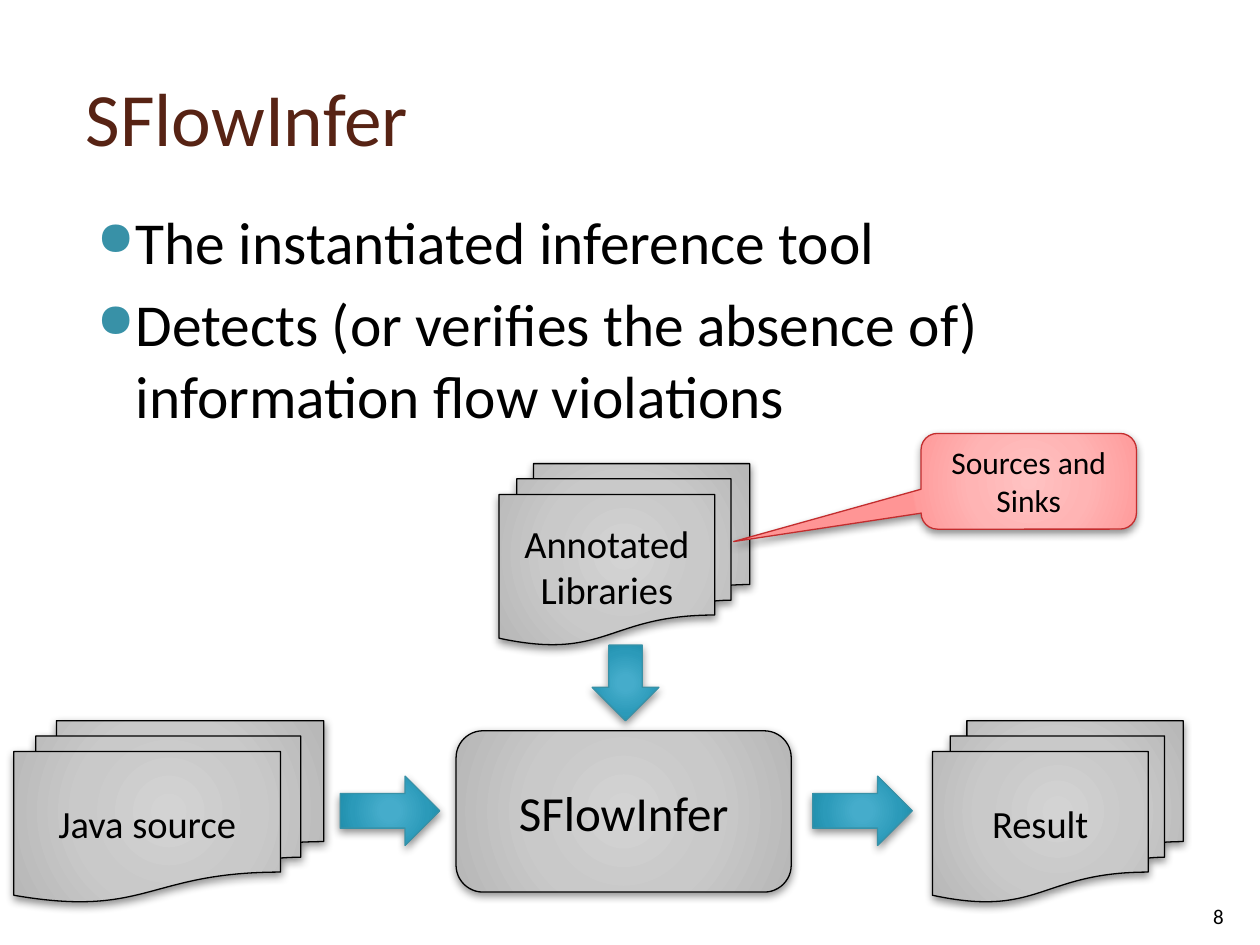
from dataclasses import dataclass

import pptx
import pptx.dml.color
import pptx.enum.shapes
import pptx.enum.text
import pptx.oxml
import pptx.oxml.ns
import pptx.util

Inches = pptx.util.Inches
Pt = pptx.util.Pt
SHAPE = pptx.enum.shapes.MSO_SHAPE
ALIGN = pptx.enum.text.PP_ALIGN
ANCHOR = pptx.enum.text.MSO_ANCHOR
A = pptx.oxml.ns.nsdecls("a")


@dataclass(frozen=True)
class Look:
    stops: tuple
    line: str


@dataclass(frozen=True)
class Theme:
    font: str = "Calibri"
    ink: str = "000000"
    title_ink: str = "572314"
    bullet: str = "3891A7"
    title: int = 43
    body: int = 34
    tool: int = 28
    label: int = 22
    note: int = 18
    number: int = 12
    grey: Look = Look(((0, "D3D3D3"), (50, "C9C9C9"), (97, "B8B8B8"), (100, "B2B2B2")), "000000")
    teal: Look = Look(((0, "45ACCC"), (15, "45ACCB"), (62, "2B9AB9"), (97, "1C8AA7"), (100, "0E89A7")), "3891A7")
    red: Look = Look(((0, "FFC2C2"), (50, "FFB4B4"), (97, "FF9C9C"), (100, "FF9595")), "C32D2E")


class Deck:
    def __init__(self, theme):
        self.theme = theme
        self.prs = pptx.Presentation()
        self.prs.slide_width, self.prs.slide_height = Inches(10), Inches(7.5)
        self.s = None

    def add_slide(self):
        self.s = self.prs.slides.add_slide(self.prs.slide_layouts[5])

    def set_text(self, tf, text, size, color, align, anchor):
        tf.text = text
        tf.word_wrap = True
        tf.auto_size = pptx.enum.text.MSO_AUTO_SIZE.NONE
        tf.vertical_anchor = anchor
        for p in tf.paragraphs:
            p.alignment = align
            for r in p.runs:
                r.font.name = self.theme.font
                r.font.size = Pt(size)
                r.font.color.rgb = pptx.dml.color.RGBColor.from_string(color)

    def title(self, text, left, top, width, height):
        sp = self.s.shapes.title
        sp.left, sp.top, sp.width, sp.height = map(Inches, (left, top, width, height))
        self.set_text(sp.text_frame, text, self.theme.title, self.theme.title_ink, ALIGN.LEFT, ANCHOR.MIDDLE)

    def text(self, text, left, top, width, height, size, align=ALIGN.LEFT, anchor=ANCHOR.TOP):
        sp = self.s.shapes.add_textbox(*map(Inches, (left, top, width, height)))
        self.set_text(sp.text_frame, text, size, self.theme.ink, align, anchor)
        return sp

    def bullets(self, items, left, top, width, height):
        sp = self.text("\n".join(items), left, top, width, height, self.theme.body)
        for p in sp.text_frame.paragraphs:
            p.space_before = Pt(6)
            pPr = p._p.get_or_add_pPr()
            pPr.set("marL", str(Inches(0.4)))
            pPr.set("indent", str(Inches(-0.31)))
            for xml in (
                f'<a:buClr {A}><a:srgbClr val="{self.theme.bullet}"/></a:buClr>',
                f'<a:buSzPct {A} val="80000"/>',
                f'<a:buChar {A} char="●"/>',
            ):
                pPr.append(pptx.oxml.parse_xml(xml))

    def shape(self, kind, look, left, top, width, height, text="", size=None, adjustments=()):
        sp = self.s.shapes.add_shape(kind, *map(Inches, (left, top, width, height)))
        for i, value in enumerate(adjustments):
            sp.adjustments[i] = value
        sp.line.color.rgb = pptx.dml.color.RGBColor.from_string(look.line)
        sp.line.width = Pt(0.75)
        self.shade(sp, look.stops)
        if text:
            self.set_text(sp.text_frame, text, size, self.theme.ink, ALIGN.CENTER, ANCHOR.MIDDLE)

    def shade(self, sp, stops):
        gs = "".join(f'<a:gs pos="{pos * 1000}"><a:srgbClr val="{color}"/></a:gs>' for pos, color in stops)
        spPr = sp._element.spPr
        spPr.find(pptx.oxml.ns.qn("a:prstGeom")).addnext(pptx.oxml.parse_xml(
            f'<a:gradFill {A} rotWithShape="1"><a:gsLst>{gs}</a:gsLst><a:path path="circle">'
            '<a:fillToRect l="50000" t="50000" r="50000" b="50000"/></a:path></a:gradFill>'))
        spPr.append(pptx.oxml.parse_xml(
            f'<a:effectLst {A}><a:outerShdw blurRad="{Pt(5)}" dist="{Pt(2)}" dir="5400000" '
            'rotWithShape="0"><a:srgbClr val="000000"><a:alpha val="43000"/></a:srgbClr>'
            '</a:outerShdw></a:effectLst>'))


def main():
    theme = Theme()
    deck = Deck(theme)
    deck.add_slide()
    deck.title("SFlowInfer", 0.58, 0.3, 8.87, 1.25)
    deck.bullets(
        ["The instantiated inference tool",
         "Detects (or verifies the absence of) information flow violations"],
        0.58, 1.58, 8.87, 5.25)

    for text, left, top, width in (
        ("Java source", 0.11, 5.72, 2.46),
        ("Annotated Libraries", 3.96, 3.68, 1.99),
        ("Result", 7.4, 5.72, 1.99),
    ):
        deck.shape(SHAPE.FLOWCHART_MULTIDOCUMENT, theme.grey, left, top, width, 1.44, text, theme.label)
    deck.shape(SHAPE.ROUNDED_RECTANGLE, theme.grey, 3.62, 5.8, 2.66, 1.28, "SFlowInfer", theme.tool)

    deck.shape(SHAPE.DOWN_ARROW, theme.teal, 4.7, 5.12, 0.53, 0.6)
    for left in (2.7, 6.45):
        deck.shape(SHAPE.RIGHT_ARROW, theme.teal, left, 6.16, 0.79, 0.55)

    deck.shape(SHAPE.ROUNDED_RECTANGULAR_CALLOUT, theme.red, 7.31, 3.44, 1.71, 0.76,
               "Sources and Sinks", theme.note, (-1.37, 0.63, 0.17))
    deck.text("8", 9.42, 6.9, 0.5, 0.52, theme.number, ALIGN.CENTER, ANCHOR.BOTTOM)
    deck.prs.save("out.pptx")


if __name__ == "__main__":
    main()
